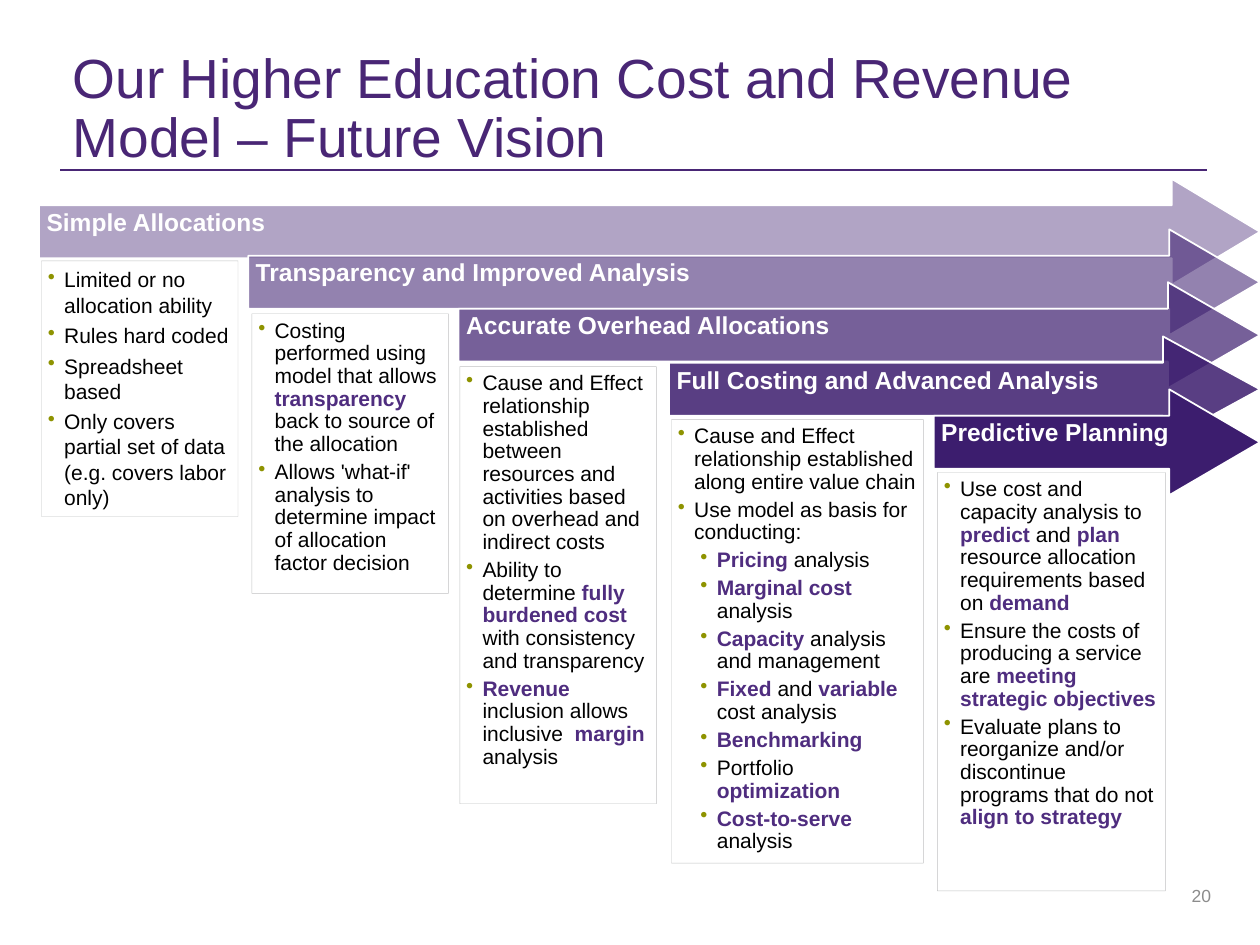
from dataclasses import dataclass

from lxml import etree
from pptx import Presentation
from pptx.dml.color import RGBColor
from pptx.enum.shapes import MSO_CONNECTOR, MSO_SHAPE
from pptx.enum.text import MSO_ANCHOR, PP_ALIGN
from pptx.oxml.ns import qn
from pptx.util import Pt

SCALE = 9144
TOP, MIDDLE = MSO_ANCHOR.TOP, MSO_ANCHOR.MIDDLE
LEFT, RIGHT = PP_ALIGN.LEFT, PP_ALIGN.RIGHT
RECT, STRAIGHT = MSO_SHAPE.RECTANGLE, MSO_CONNECTOR.STRAIGHT
FONT = "Arial"
PURPLE, DEEP, ACCENT = "492675", "3C1D6E", "4F2D7F"
OLIVE, GREY, PALE = "8E9300", "828485", "8C8C8C"
WHITE, BLACK = "FFFFFF", "000000"
TIP, HEAD, SHAFT = 1000, 84, 42


@dataclass
class Point:
    text: str
    level: int = 0


@dataclass
class Arrow:
    title: str
    left: int
    top: int
    neck: int
    alpha: int


@dataclass
class Panel:
    left: int
    top: int
    width: int
    height: int
    points: list[Point]
    spacing: float = 0.9


STEPS = [
    (Arrow("Simple Allocations", 31, 142, 930, 40),
     Panel(33, 207, 156, 203, [
         Point("Limited or no allocation ability"),
         Point("Rules hard coded"),
         Point("Spreadsheet based"),
         Point("Only covers partial set of data (e.g. covers labor only)"),
     ], 1.0)),
    (Arrow("Transparency and Improved Analysis", 197, 182, 928, 55),
     Panel(200, 249, 156, 222, [
         Point("Costing performed using model that allows *transparency*"
               " back to source of the allocation"),
         Point("Allows 'what-if' analysis to determine impact of allocation"
               " factor decision"),
     ])),
    (Arrow("Accurate Overhead Allocations", 364, 224, 927, 70),
     Panel(365, 291, 156, 347, [
         Point("Cause and Effect relationship established between resources"
               " and activities based on overhead and indirect costs"),
         Point("Ability to determine *fully burdened cost *with consistency"
               " and transparency"),
         Point("*Revenue *inclusion allows inclusive  *margin* analysis"),
     ])),
    (Arrow("Full Costing and Advanced Analysis", 531, 267, 923, 85),
     Panel(533, 333, 200, 352, [
         Point("Cause and Effect relationship established along entire value"
               " chain"),
         Point("Use model as basis for conducting:"),
         Point("*Pricing *analysis", 1),
         Point("*Marginal cost *analysis", 1),
         Point("*Capacity *analysis and management", 1),
         Point("*Fixed *and *variable* cost analysis", 1),
         Point("*Benchmarking*", 1),
         Point("Portfolio *optimization*", 1),
         Point("*Cost-to-serve* analysis", 1),
     ])),
    (Arrow("Predictive Planning", 741, 309, 928, 100),
     Panel(744, 375, 181, 332, [
         Point("Use cost and capacity analysis to *predict* and *plan*"
               " resource allocation requirements based on *demand*"),
         Point("Ensure the costs of producing a service are"
               " *meeting strategic objectives*"),
         Point("Evaluate plans to reorganize and/or discontinue programs that"
               " do not *align to strategy*"),
     ])),
]


def px(size: int) -> int:
    return size * SCALE


def tint(code: str) -> RGBColor:
    return RGBColor.from_string(code)


def fade(shape, path: str, alpha: int) -> None:
    fill = shape._element.spPr.find(path)
    etree.SubElement(fill[0], qn("a:alpha")).set("val", str(alpha * 1000))


def style(run, size: float, code: str, bold: bool = False) -> None:
    run.font.name = FONT
    run.font.size = Pt(size)
    run.font.bold = bold
    run.font.color.rgb = tint(code)


def inset(frame, left: int, top: int, right: int, bottom: int) -> None:
    frame.margin_left, frame.margin_top = px(left), px(top)
    frame.margin_right, frame.margin_bottom = px(right), px(bottom)


def label(frame, text: str, size: float, code: str, bold: bool = False,
          align=LEFT, spacing: float = 1.0) -> None:
    frame.text = text
    frame.word_wrap = True
    frame.vertical_anchor = MIDDLE
    para = frame.paragraphs[0]
    para.alignment = align
    para.line_spacing = spacing
    style(para.runs[0], size, code, bold)


def bullet(para, point: Point, spacing: float) -> None:
    para.level = point.level
    para.alignment = LEFT
    para.line_spacing = spacing
    para.space_after = Pt(3)
    props = para._p.get_or_add_pPr()
    props.set("marL", str(px(13 + 18 * point.level)))
    props.set("indent", str(px(-13)))
    color = etree.SubElement(props, qn("a:buClr"))
    etree.SubElement(color, qn("a:srgbClr")).set("val", OLIVE)
    etree.SubElement(props, qn("a:buChar")).set("char", "•")
    for index, part in enumerate(point.text.split("*")):
        if part:
            strong = index % 2 == 1
            run = para.add_run()
            run.text = part
            style(run, 12, ACCENT if strong else BLACK, strong)


def draw_arrow(shapes, arrow: Arrow) -> None:
    high = arrow.top + (HEAD - SHAFT) // 2
    low = high + SHAFT
    outline = shapes.build_freeform(arrow.left, high, scale=SCALE)
    outline.add_line_segments([
        (arrow.neck, high), (arrow.neck, arrow.top),
        (TIP, arrow.top + HEAD // 2),
        (arrow.neck, arrow.top + HEAD), (arrow.neck, low), (arrow.left, low),
    ])
    shape = outline.convert_to_shape()
    shape.shadow.inherit = False
    shape.fill.solid()
    shape.fill.fore_color.rgb = tint(DEEP)
    if arrow.alpha < 100:
        fade(shape, qn("a:solidFill"), arrow.alpha)
    shape.line.color.rgb = tint(WHITE)
    shape.line.width = Pt(1)
    label(shape.text_frame, arrow.title, 14, WHITE, True)
    inset(shape.text_frame, 6, 40, 62, 56)


def draw_panel(shapes, panel: Panel) -> None:
    shape = shapes.add_shape(RECT, px(panel.left), px(panel.top),
                             px(panel.width), px(panel.height))
    shape.shadow.inherit = False
    shape.fill.background()
    shape.line.color.rgb = tint(GREY)
    shape.line.width = Pt(0.25)
    fade(shape, qn("a:ln") + "/" + qn("a:solidFill"), 50)
    frame = shape.text_frame
    frame.word_wrap = True
    frame.vertical_anchor = TOP
    inset(frame, 5, 5, 5, 5)
    for index, point in enumerate(panel.points):
        para = frame.add_paragraph() if index else frame.paragraphs[0]
        bullet(para, point, panel.spacing)


def main() -> None:
    deck = Presentation()
    deck.slide_width, deck.slide_height = px(1000), px(750)
    shapes = deck.slides.add_slide(deck.slide_layouts[6]).shapes

    rule = shapes.add_connector(STRAIGHT, px(48), px(135), px(958), px(135))
    rule.line.color.rgb = tint(PURPLE)
    rule.line.width = Pt(1.5)
    etree.SubElement(rule._element.spPr, qn("a:effectLst"))

    title = shapes.add_textbox(px(48), px(40), px(910), px(95))
    label(title.text_frame,
          "Our Higher Education Cost and Revenue Model – Future Vision",
          31.5, PURPLE, spacing=0.9)

    for arrow, panel in STEPS:
        draw_arrow(shapes, arrow)
        draw_panel(shapes, panel)

    page = shapes.add_textbox(px(746), px(691), px(225), px(40))
    label(page.text_frame, "20", 10, PALE, align=RIGHT)
    deck.save("out.pptx")


if __name__ == "__main__":
    main()
